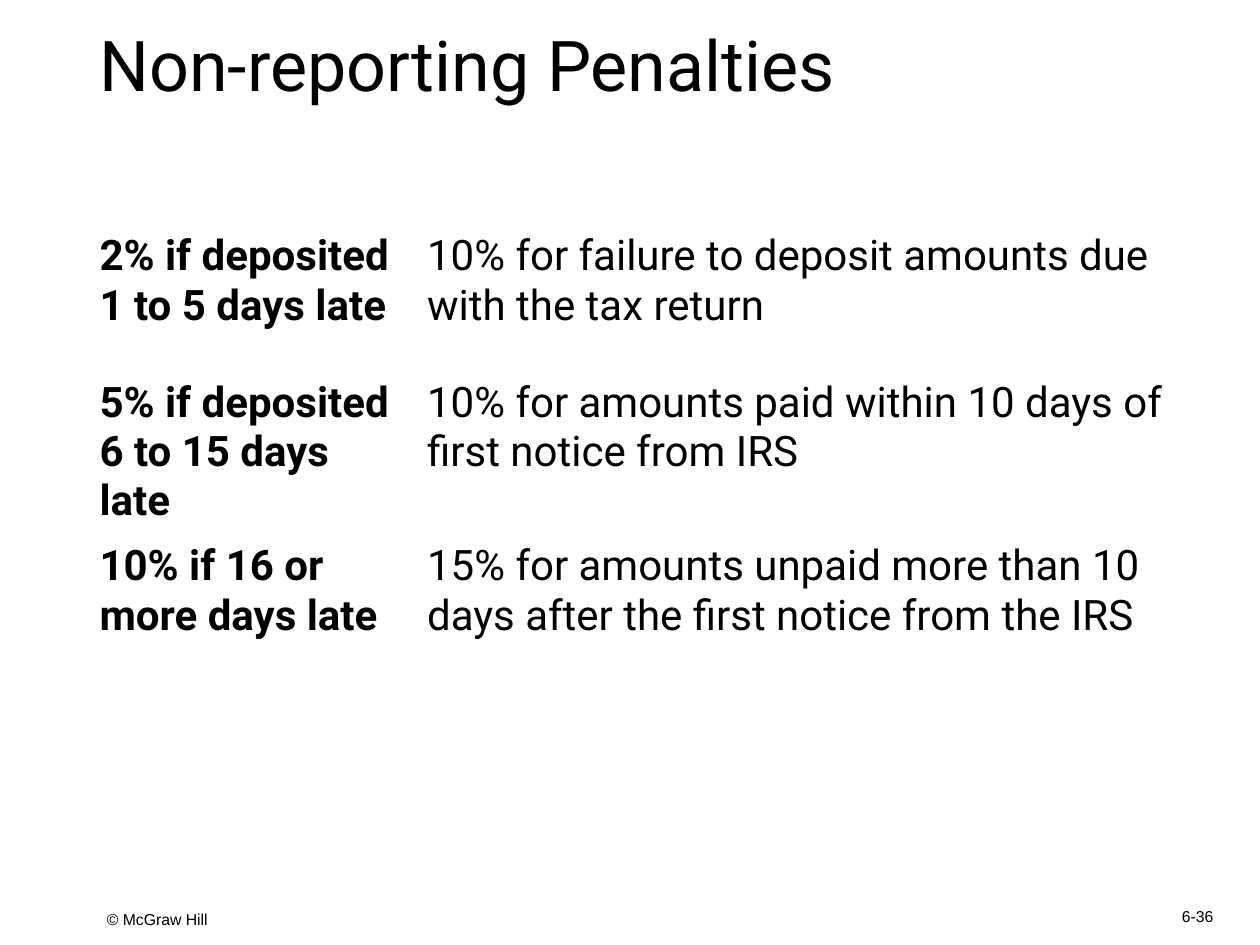
from dataclasses import dataclass

from pptx import Presentation
from pptx.dml.color import RGBColor
from pptx.enum.text import MSO_ANCHOR, PP_ALIGN
from pptx.util import Inches, Pt

LEFT, CENTER = PP_ALIGN.LEFT, PP_ALIGN.CENTER
TOP, MIDDLE = MSO_ANCHOR.TOP, MSO_ANCHOR.MIDDLE
TITLE_ONLY = 5


@dataclass(frozen=True)
class Theme:
    ink: RGBColor = RGBColor(0, 0, 0)
    paper: RGBColor = RGBColor(255, 255, 255)
    main_font: str = "Roboto"
    footer_font: str = "Arial"
    title_size: int = 40
    table_size: int = 24
    footer_size: int = 9


THEME = Theme()
PENALTIES = [
    ("2% if deposited 1 to 5 days late",
     "10% for failure to deposit amounts due with the tax return"),
    ("5% if deposited 6 to 15 days late",
     "10% for amounts paid within 10 days of first notice from IRS"),
    ("10% if 16 or more days late",
     "15% for amounts unpaid more than 10 days after the first notice from the IRS"),
]
COLUMN_WIDTHS = (2.6, 6.4)
ROW_HEIGHTS = (1.16, 1.26, 1.16)


def write(paragraph, text, font, size, bold=False, align=LEFT):
    paragraph.alignment = align
    run = paragraph.add_run()
    run.text = text
    run.font.name = font
    run.font.size = Pt(size)
    run.font.bold = bold
    run.font.color.rgb = THEME.ink


def place_title(slide, box, text):
    title = slide.shapes.title
    title.left, title.top, title.width, title.height = map(Inches, box)
    frame = title.text_frame
    frame.vertical_anchor = MIDDLE
    frame.word_wrap = True
    heading = frame.paragraphs[0]
    heading.line_spacing = 0.9
    write(heading, text, THEME.main_font, THEME.title_size)


def place_penalties(slide, box):
    frame = slide.shapes.add_table(len(PENALTIES), len(COLUMN_WIDTHS), *map(Inches, box))
    penalties = frame.table
    penalties.first_row = False
    penalties.horz_banding = False
    for column, width in zip(penalties.columns, COLUMN_WIDTHS):
        column.width = Inches(width)
    for row, height, texts in zip(penalties.rows, ROW_HEIGHTS, PENALTIES):
        row.height = Inches(height)
        for index, (cell, text) in enumerate(zip(row.cells, texts)):
            cell.fill.solid()
            cell.fill.fore_color.rgb = THEME.paper
            cell.vertical_anchor = TOP
            write(cell.text_frame.paragraphs[0], text, THEME.main_font,
                  THEME.table_size, bold=index == 0)


def place_footer(slide, box, text, align=LEFT):
    frame = slide.shapes.add_textbox(*map(Inches, box)).text_frame
    frame.word_wrap = True
    frame.vertical_anchor = MIDDLE
    write(frame.paragraphs[0], text, THEME.footer_font, THEME.footer_size, align=align)


def main():
    deck = Presentation()
    deck.slide_width, deck.slide_height = Inches(10), Inches(7.5)
    slide = deck.slides.add_slide(deck.slide_layouts[TITLE_ONLY])
    place_footer(slide, (0.75, 7.14, 8.1, 0.31), "© McGraw Hill")
    place_footer(slide, (9.09, 7.08, 0.83, 0.38), "6-36", CENTER)
    place_title(slide, (0.69, 0.14, 8.62, 0.82), "Non-reporting Penalties")
    place_penalties(slide, (0.69, 1.79, sum(COLUMN_WIDTHS), sum(ROW_HEIGHTS)))
    deck.save("out.pptx")


if __name__ == "__main__":
    main()
